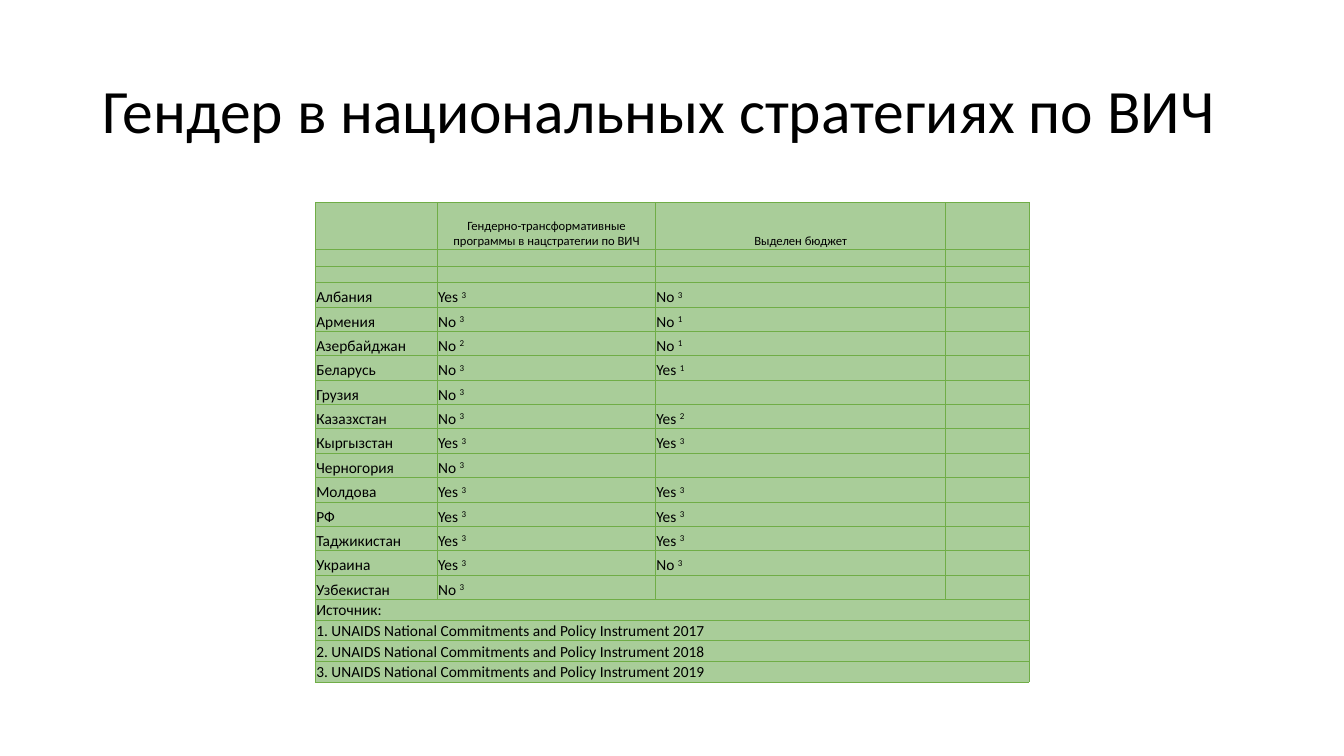
from lxml.etree import SubElement
from pptx import Presentation
from pptx.dml.color import RGBColor
from pptx.enum.text import MSO_ANCHOR, MSO_AUTO_SIZE, PP_ALIGN
from pptx.oxml.ns import qn
from pptx.util import Cm, Pt


def color(value):
    return RGBColor.from_string(value)


def write(frame, text, size=11, align=PP_ALIGN.LEFT, note="", spacing=1.0):
    paragraph = frame.paragraphs[0]
    paragraph.alignment = align
    paragraph.line_spacing = spacing
    for part, baseline in ((text, 0), (note, 30000)):
        if part:
            run = paragraph.add_run()
            run.text = part
            run.font.name = "Calibri"
            run.font.size = Pt(size)
            run.font.bold = False
            run.font.color.rgb = color("000000")
            if baseline:
                run.font._element.set("baseline", str(baseline))
    if not text:
        SubElement(paragraph._p, qn("a:endParaRPr"), sz=str(size * 100))


presentation = Presentation()
presentation.slide_width = Cm(33.87)
presentation.slide_height = Cm(19.05)
slide = presentation.slides.add_slide(presentation.slide_layouts[5])

title = slide.shapes.title
title.left, title.top, title.width, title.height = Cm(2.33), Cm(1.01), Cm(29.21), Cm(3.68)
title.text_frame.vertical_anchor = MSO_ANCHOR.MIDDLE
title.text_frame.auto_size = MSO_AUTO_SIZE.NONE
write(title.text_frame, "Гендер в национальных стратегиях по ВИЧ", size=44, spacing=0.9)

headings = ["", "Гендерно-трансформативные программы в нацстратегии по ВИЧ", "Выделен бюджет", ""]
countries = [
    ("Албания", "Yes 3", "No 3"),
    ("Армения", "No 3", "No 1"),
    ("Азербайджан", "No 2", "No 1"),
    ("Беларусь", "No 3", "Yes 1"),
    ("Грузия", "No 3", ""),
    ("Казазхстан", "No 3", "Yes 2"),
    ("Кыргызстан", "Yes 3", "Yes 3"),
    ("Черногория", "No 3", ""),
    ("Молдова", "Yes 3", "Yes 3"),
    ("РФ", "Yes 3", "Yes 3"),
    ("Таджикистан", "Yes 3", "Yes 3"),
    ("Украина", "Yes 3", "No 3"),
    ("Узбекистан", "No 3", ""),
]
sources = ["Источник:"] + [
    f"{number}. UNAIDS National Commitments and Policy Instrument {2016 + number}"
    for number in (1, 2, 3)
]
column_widths = [3.07, 5.5, 7.31, 2.1]
row_heights = [1.18, 0.42, 0.42] + [7.99 / 13] * len(countries) + [0.52] * len(sources)
first_country = 3
first_source = first_country + len(countries)

strategies = slide.shapes.add_table(
    len(row_heights), len(column_widths), Cm(7.95), Cm(5.1),
    Cm(sum(column_widths)), Cm(sum(row_heights)),
).table
strategies.first_row = False
strategies.horz_banding = False
for column, width in zip(strategies.columns, column_widths):
    column.width = Cm(width)
for row, height in zip(strategies.rows, row_heights):
    row.height = Cm(height)
    for cell in row.cells:
        cell.margin_left = cell.margin_right = cell.margin_top = Cm(0.02)
        cell.margin_bottom = 0
        cell.vertical_anchor = MSO_ANCHOR.BOTTOM
        for side in ("a:lnL", "a:lnR", "a:lnT", "a:lnB"):
            border = SubElement(cell._tc.get_or_add_tcPr(), qn(side), w=str(Pt(0.5)))
            line_fill = SubElement(border, qn("a:solidFill"))
            SubElement(line_fill, qn("a:srgbClr"), val="70AD47")
        cell.fill.solid()
        cell.fill.fore_color.rgb = color("A9CD99")

for index, heading in enumerate(headings):
    write(strategies.cell(0, index).text_frame, heading, size=9, align=PP_ALIGN.CENTER)
    for spacer in (1, 2):
        write(strategies.cell(spacer, index).text_frame, "", size=9)

for index, (country, programmes, budget) in enumerate(countries, first_country):
    write(strategies.cell(index, 0).text_frame, country)
    for column, answer in enumerate((programmes, budget, ""), 1):
        write(strategies.cell(index, column).text_frame, answer[:-1], note=answer[-1:])

for index, source in enumerate(sources, first_source):
    strategies.cell(index, 0).merge(strategies.cell(index, 3))
    write(strategies.cell(index, 0).text_frame, source)
    for column in (1, 2, 3):
        write(strategies.cell(index, column).text_frame, "", size=9)

presentation.save("out.pptx")
